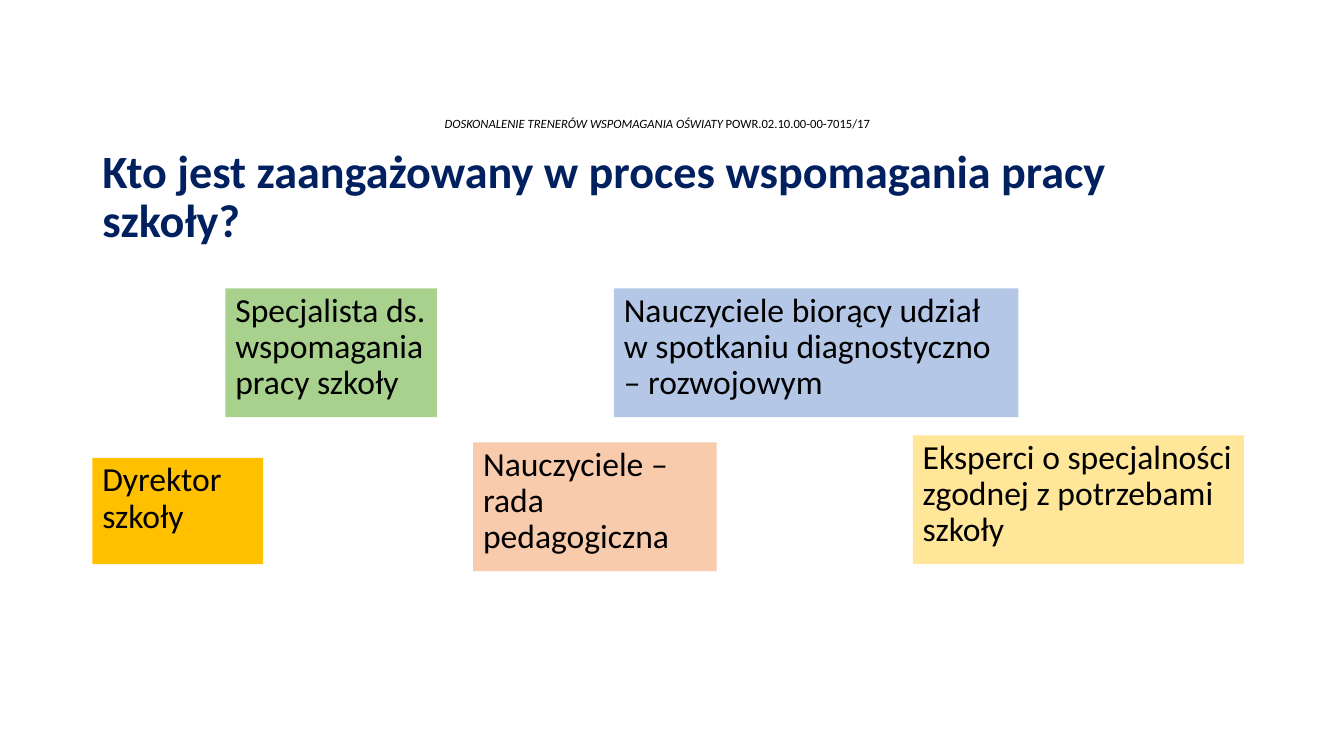
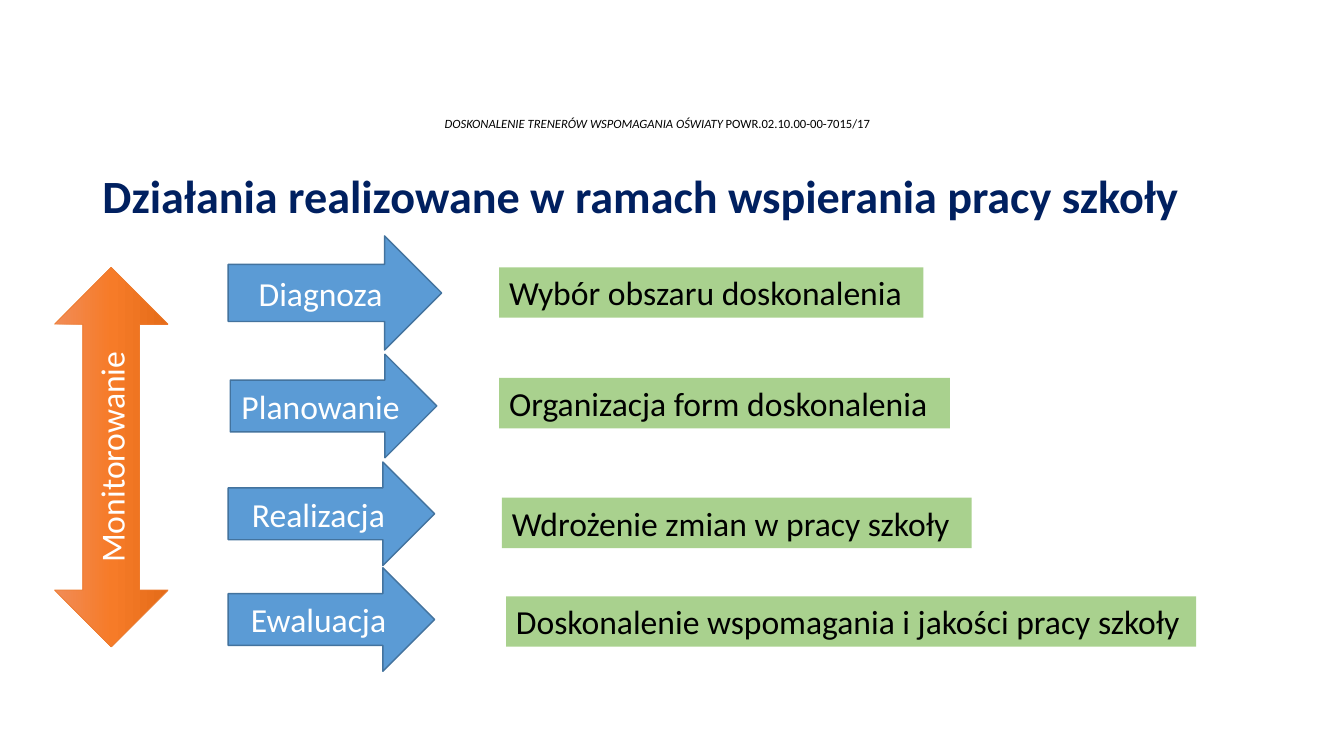
from copy import deepcopy

from pptx import Presentation
from pptx.dml.color import RGBColor
from pptx.enum.shapes import MSO_SHAPE
from pptx.enum.text import MSO_ANCHOR, MSO_AUTO_SIZE, PP_ALIGN
from pptx.oxml.ns import qn
from pptx.util import Pt

RECTANGLE = MSO_SHAPE.RECTANGLE
RIGHT_ARROW = MSO_SHAPE.RIGHT_ARROW
DOUBLE_ARROW = MSO_SHAPE.LEFT_RIGHT_ARROW
TOP, MIDDLE = MSO_ANCHOR.TOP, MSO_ANCHOR.MIDDLE
LEFT, CENTER = PP_ALIGN.LEFT, PP_ALIGN.CENTER
NO_AUTOFIT = MSO_AUTO_SIZE.NONE
TITLE_ONLY = 5

FONT = "Calibri"
BLACK, WHITE, NAVY = "000000", "FFFFFF", "002060"
GREEN, BLUE, BLUE_EDGE = "A9D18E", "5B9BD5", "43739E"
ORANGE_EDGE = "ED7D31"
ORANGE_STOPS = [(0, "F18C57"), (0.5, "F67B28"), (1, "E56C19")]

HEADER_BOX = (57, 80, 825, 18)
TITLE_BOX = (66, 105, 828, 73)
PEOPLE_BOX = (66, 206, 830, 206)
STEPS_BOX = (163, 168.5, 700, 312)
MONITORING_BOX = (-56, 286, 271, 81)

PEOPLE = [
    ("Specjalista ds. wspomagania pracy szkoły", GREEN, (95, 0, 151, 92)),
    ("Dyrektor szkoły", "FFC000", (0, 121, 122, 76)),
    ("Eksperci o specjalności zgodnej z potrzebami szkoły", "FFE699",
     (586, 105, 236.5, 92)),
    ("Nauczyciele – rada pedagogiczna", "F8CBAD", (272, 110, 174, 92)),
    ("Nauczyciele biorący udział w spotkaniu diagnostyczno – rozwojowym",
     "B4C7E7", (372.5, 0, 289, 92)),
]
STEPS = [
    ("Diagnoza", (0, 0, 152.5, 81.5),
     "Wybór obszaru doskonalenia", (193.5, 22.5, 303, 36)),
    ("Planowanie", (1.5, 84.5, 147.5, 74),
     "Organizacja form doskonalenia", (193.5, 101.5, 322, 36)),
    ("Realizacja", (0, 161.5, 147.5, 74),
     "Wdrożenie zmian w pracy szkoły", (195.5, 187, 335.5, 36)),
    ("Ewaluacja", (0, 237, 147.5, 74),
     "Doskonalenie wspomagania i jakości pracy szkoły", (198.5, 257.5, 493, 36)),
]


def color(hex_string):
    """Turn a hex string into a colour."""
    return RGBColor.from_string(hex_string)


def lengths(box):
    """Convert a box in points to lengths."""
    return [Pt(value) for value in box]


def inside(region, box):
    """Shift a box by the corner of its region."""
    left, top, width, height = box
    return region[0] + left, region[1] + top, width, height


def write_text(frame, text, size=24, ink=BLACK, bold=False, italic=False,
               align=LEFT, anchor=TOP, spacing=1.0):
    """Append a formatted run to the first paragraph of a frame."""
    frame.word_wrap = True
    frame.auto_size = NO_AUTOFIT
    frame.vertical_anchor = anchor
    paragraph = frame.paragraphs[0]
    paragraph.alignment = align
    paragraph.line_spacing = spacing
    run = paragraph.add_run()
    run.text = text
    run.font.name = FONT
    run.font.size = Pt(size)
    run.font.bold = bold
    run.font.italic = italic
    run.font.color.rgb = color(ink)


def add_block(slide, kind, box, text, fill, edge=None, edge_width=1, **text_format):
    """Add a filled shape with text."""
    shape = slide.shapes.add_shape(kind, *lengths(box))
    shape.shadow.inherit = False
    shape.fill.solid()
    shape.fill.fore_color.rgb = color(fill)
    if edge:
        shape.line.color.rgb = color(edge)
        shape.line.width = Pt(edge_width)
    else:
        shape.line.fill.background()
    write_text(shape.text_frame, text, **text_format)
    return shape


def fill_gradient(shape, stops):
    """Fill a shape from its top edge to its bottom edge with three stops."""
    shape.fill.gradient()
    stop_list = shape.element.spPr.find(qn("a:gradFill")).find(qn("a:gsLst"))
    stop_list.insert(1, deepcopy(stop_list[0]))
    for stop, (position, hex_string) in zip(shape.fill.gradient_stops, stops):
        stop.position = position
        stop.color.rgb = color(hex_string)
    shape.fill.gradient_angle = 270


def add_slide(presentation, title_text):
    """Add a slide with the project header and a title."""
    slide = presentation.slides.add_slide(presentation.slide_layouts[TITLE_ONLY])
    title = slide.shapes.title
    title.left, title.top, title.width, title.height = lengths(TITLE_BOX)
    write_text(title.text_frame, title_text, size=33, ink=NAVY, bold=True,
               anchor=MIDDLE, spacing=0.9)
    header = slide.shapes.add_textbox(*lengths(HEADER_BOX)).text_frame
    header_format = {"size": 9, "align": CENTER, "anchor": MIDDLE, "spacing": 0.9}
    write_text(header, "DOSKONALENIE TRENERÓW WSPOMAGANIA OŚWIATY ",
               italic=True, **header_format)
    write_text(header, "POWR.02.10.00-00-7015/17", **header_format)
    return slide


def add_people(slide, region):
    """Place the coloured cards of the people involved."""
    for text, fill, box in PEOPLE:
        add_block(slide, RECTANGLE, inside(region, box), text, fill, spacing=0.9)


def add_steps(slide, region):
    """Place each step arrow with its result beside it."""
    for step, arrow_box, result, result_box in STEPS:
        add_block(slide, RIGHT_ARROW, inside(region, arrow_box), step, BLUE,
                  edge=BLUE_EDGE, ink=WHITE, align=CENTER, anchor=MIDDLE)
        add_block(slide, RECTANGLE, inside(region, result_box), result, GREEN)


def add_monitoring(slide, box):
    """Place the upright double arrow that spans all steps."""
    arrow = add_block(slide, DOUBLE_ARROW, box, "Monitorowanie", ORANGE_EDGE,
                      edge=ORANGE_EDGE, edge_width=0.5, ink=WHITE,
                      align=CENTER, anchor=MIDDLE)
    arrow.rotation = 270
    fill_gradient(arrow, ORANGE_STOPS)


def main():
    """Build and save the presentation."""
    presentation = Presentation()
    presentation.slide_width, presentation.slide_height = Pt(960), Pt(540)
    people_slide = add_slide(
        presentation, "Kto jest zaangażowany w proces wspomagania pracy szkoły?")
    add_people(people_slide, PEOPLE_BOX)
    steps_slide = add_slide(
        presentation, "Działania realizowane w ramach wspierania pracy szkoły")
    add_steps(steps_slide, STEPS_BOX)
    add_monitoring(steps_slide, MONITORING_BOX)
    presentation.save("out.pptx")


if __name__ == "__main__":
    main()
